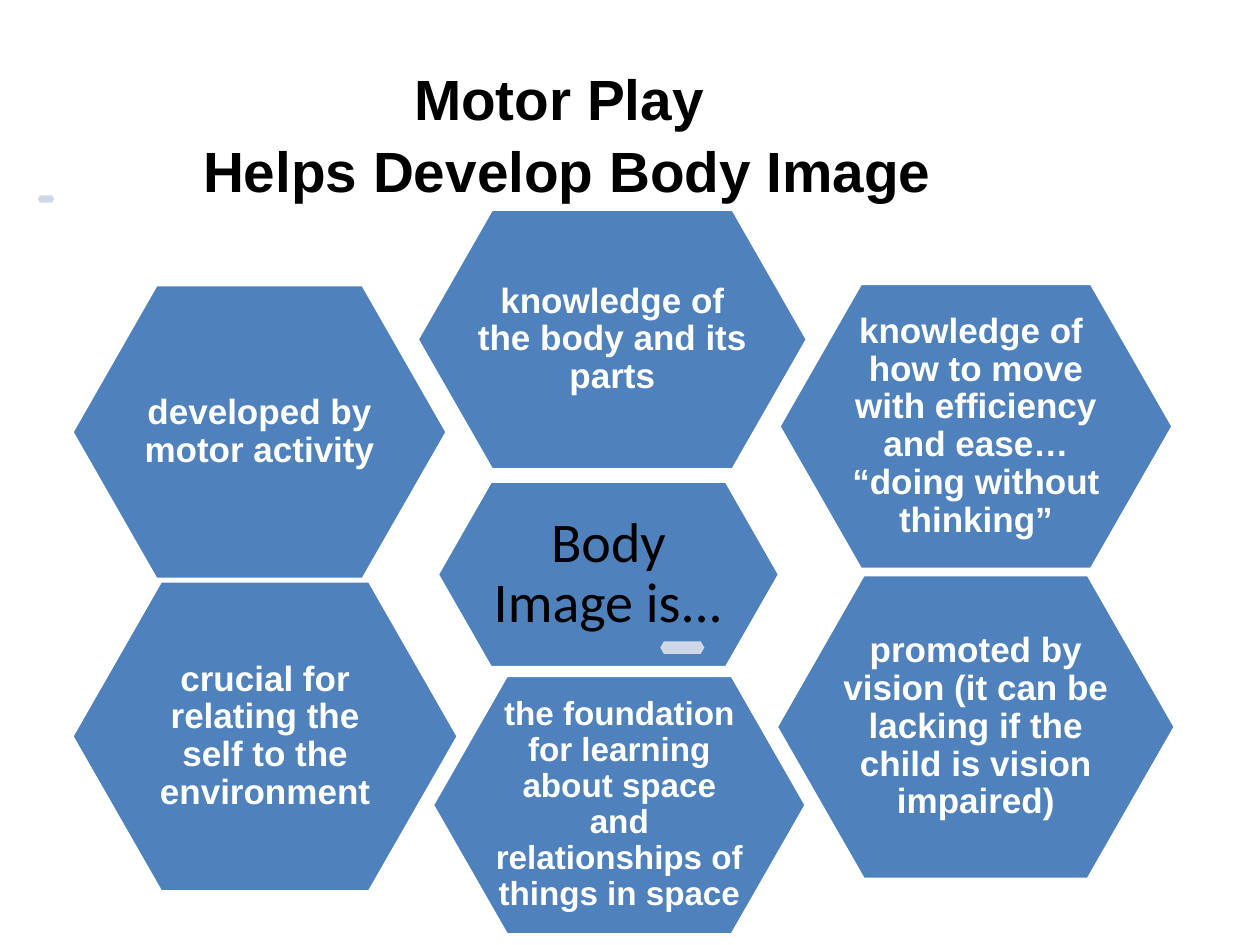
from pptx import Presentation
from pptx.dml.color import RGBColor
from pptx.enum.shapes import MSO_SHAPE as Shape
from pptx.enum.text import MSO_ANCHOR as Anchor, PP_ALIGN as Align
from pptx.util import Pt

BLUE = RGBColor(0x4F, 0x81, 0xBD)
PALE = RGBColor(0xD0, 0xD8, 0xE8)
WHITE = RGBColor(0xFF, 0xFF, 0xFF)
BLACK = RGBColor(0, 0, 0)

CENTER = (249.8, 275, 195.8, 106.6)
IDEAS = [
    ((238.3, 119.5, 223.2, 149), 157.7, 20, "knowledge of the body and its parts"),
    ((445, 162, 225.4, 163.4), 157, 20,
     "knowledge of  how to move with efficiency and ease… “doing without thinking”"),
    ((443.5, 328.3, 228.2, 174.2), 157, 20,
     "promoted by vision (it can be lacking if the child is vision impaired)"),
    ((247, 385.9, 213.8, 148.3), 150.5, 19,
     "the foundation for learning about space and relationships of things in space"),
    ((41, 331.9, 221, 177.8), 149.8, 20,
     "crucial for relating the self to the environment"),
    ((41, 162.7, 214.6, 168.5), 146.9, 20, "developed by motor activity"),
]
ACCENTS = [(21.6, 111.6, 9.4, 4.3), (377.3, 366.5, 25.2, 7.2)]


def add_hexagon(page, bounds, color, adjustment, outline=None):
    hexagon = page.shapes.add_shape(Shape.HEXAGON, *map(Pt, bounds))
    hexagon.adjustments[0] = adjustment
    hexagon.shadow.inherit = False
    hexagon.fill.solid()
    hexagon.fill.fore_color.rgb = color
    if outline is None:
        hexagon.line.fill.background()
    else:
        hexagon.line.color.rgb = outline
        hexagon.line.width = Pt(2)


def add_text(page, bounds, text, size, font, color, bold, spacing, inset=0):
    box = page.shapes.add_textbox(*map(Pt, bounds))
    frame = box.text_frame
    frame.word_wrap = True
    frame.vertical_anchor = Anchor.MIDDLE
    frame.margin_left = frame.margin_right = Pt(inset)
    frame.margin_top = frame.margin_bottom = Pt(inset)
    para = frame.paragraphs[0]
    para.text = text
    para.alignment = Align.CENTER
    para.line_spacing = spacing
    para.font.name = font
    para.font.size = Pt(size)
    para.font.bold = bold
    para.font.color.rgb = color


def add_labelled_hexagon(page, bounds, text_width, size, text,
                         font="Arial", color=WHITE, bold=True):
    left, top, width, height = bounds
    add_hexagon(page, bounds, BLUE, 0.286, WHITE)
    text_height = height * 0.7
    text_bounds = (left + (width - text_width) / 2,
                   top + (height - text_height) / 2, text_width, text_height)
    add_text(page, text_bounds, text, size, font, color, bold, 0.9, 2)


def main():
    deck = Presentation()
    deck.slide_width, deck.slide_height = Pt(720), Pt(540)
    page = deck.slides.add_slide(deck.slide_layouts[6])
    add_text(page, (0, 36, 648, 79), "Motor Play \vHelps Develop Body Image",
             32.4, "Arial", BLACK, True, 1.05)
    add_labelled_hexagon(page, CENTER, 142.6, 32, "Body Image is...",
                         "Calibri", BLACK, False)
    for idea in IDEAS:
        add_labelled_hexagon(page, *idea)
    for bounds in ACCENTS:
        add_hexagon(page, bounds, PALE, 0.289)
    deck.save("out.pptx")


if __name__ == "__main__":
    main()
